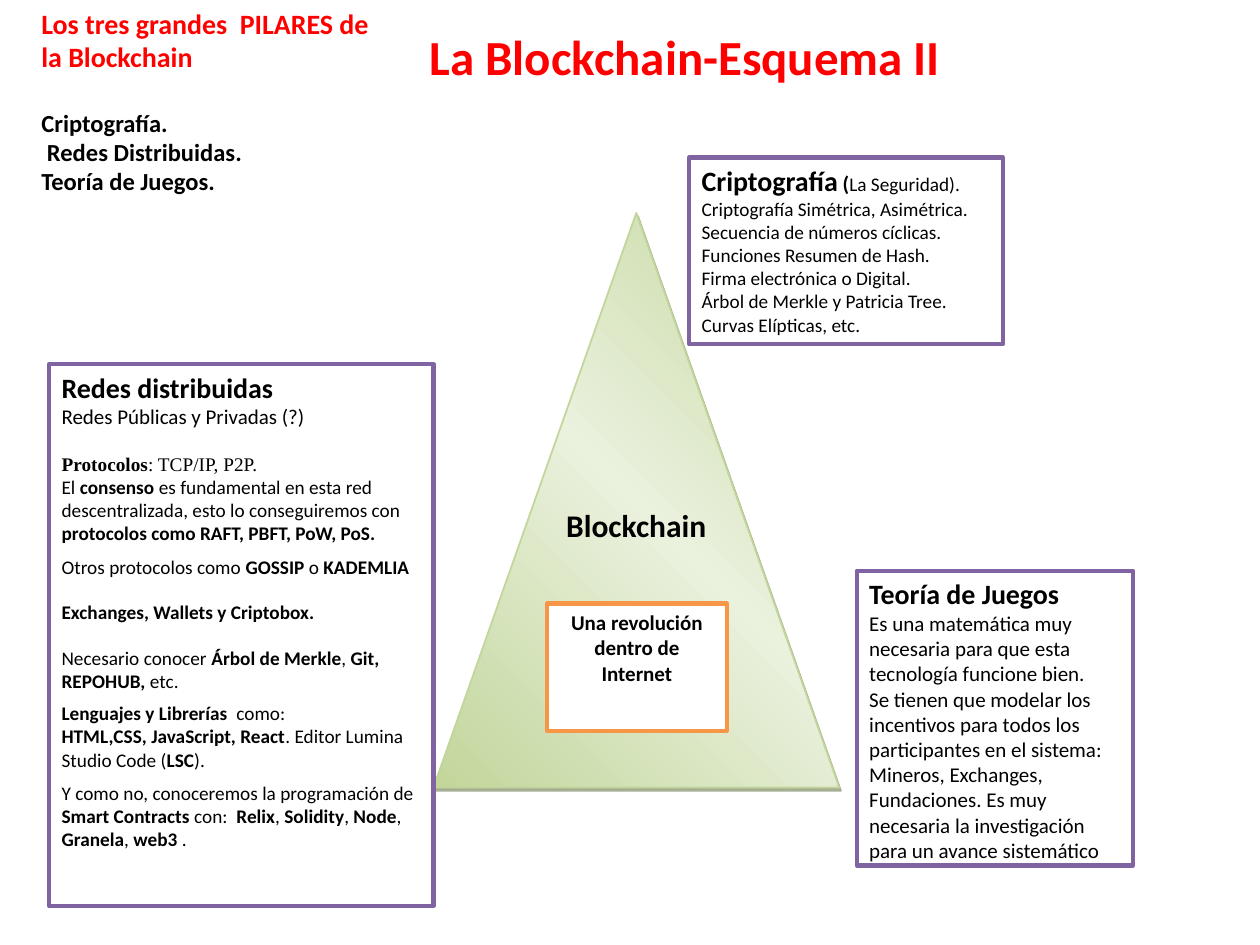
from copy import deepcopy
from pptx import Presentation
from pptx.dml.color import RGBColor
from pptx.enum.shapes import MSO_SHAPE as SHAPE
from pptx.enum.text import MSO_ANCHOR as ANCHOR, PP_ALIGN as ALIGN
from pptx.oxml import parse_xml
from pptx.oxml.ns import nsdecls, qn
from pptx.util import Inches, Pt

COLORS = {"red": "FF0000", "black": "000000", "white": "FFFFFF",
          "purple": "8064A2", "orange": "F79646",
          "green": "C2D69B", "pale": "EAF1DD", "shade": "4E6128"}
SANS, SERIF = "Calibri", "Times New Roman"

# Paragraph: (space after, [(text, size, font)]); *...* marks bold, \n a line break
TITLE = [(0, [("*La Blockchain-Esquema II*", 28, SANS)])]
PILLARS_HEAD = (19.5, [("*Los tres grandes  PILARES de la Blockchain*", 16, SANS)])
PILLARS = (0, [("*Criptografía.\n Redes Distribuidas.\nTeoría de Juegos.*", 14, SANS)])
CENTRE = [(10, [("*Blockchain*", 18, SANS)])]
CRYPTO = [(10, [
    ("*Criptografía*", 16, SANS), ("* (*", 12, SANS),
    ("La Seguridad).\nCriptografía Simétrica, Asimétrica.\n"
     "Secuencia de números cíclicas.\nFunciones Resumen de Hash.\n"
     "Firma electrónica o Digital.\nÁrbol de Merkle y Patricia Tree.\n"
     "Curvas Elípticas, etc.", 11, SANS)])]
NETWORKS = [
    (0, [("*Redes distribuidas*", 16, SANS)]),
    (13, [("Redes Públicas y Privadas (?)", 12, SANS)]),
    (6, [("*Protocolos*: TCP/IP, P2P.\n", 11, SERIF),
         ("El *consenso* es fundamental en esta red descentralizada, esto lo "
          "conseguiremos con *protocolos como RAFT, PBFT, PoW, PoS.*", 11, SANS)]),
    (13, [("Otros protocolos como *GOSSIP* o *KADEMLIA*", 11, SANS)]),
    (13, [("*Exchanges, Wallets y Criptobox.*", 11, SANS)]),
    (5, [("Necesario conocer *Árbol de Merkle*, *Git, REPOHUB, *etc.", 11, SANS)]),
    (6, [("*Lenguajes y Librerías  *como:\n*HTML,CSS, JavaScript, React*. "
          "Editor Lumina Studio Code (*LSC*).", 11, SANS)]),
    (6, [("Y como no, conoceremos la programación de *Smart Contracts *con:  "
          "*Relix*, *Solidity*, *Node*, *Granela*, *web3* .", 11, SANS)]),
]
GAMES = [(10, [
    ("*Teoría de Juegos*\n", 16, SANS),
    ("Es una matemática muy necesaria para que esta tecnología funcione bien.\n"
     "Se tienen que modelar los incentivos para todos los participantes en el "
     "sistema: Mineros, Exchanges, Fundaciones. Es muy necesaria la "
     "investigación para un avance sistemático", 12, SANS)])]
REVOLUTION = [(10, [("*Una revolución dentro de\nInternet*", 12, SANS)])]

# Boxes: place, border, alignment, text
BOXES = [
    ((5.47, 1.25, 2.49, 1.48), "purple", ALIGN.LEFT, CRYPTO),
    ((0.39, 2.89, 3.05, 4.3), "purple", ALIGN.LEFT, NETWORKS),
    ((6.8, 4.53, 2.19, 2.34), "purple", ALIGN.LEFT, GAMES),
    ((4.34, 4.79, 1.43, 1.01), "orange", ALIGN.CENTER, REVOLUTION),
]


def rgb(name):
    return RGBColor.from_string(COLORS[name])


def add_text(p, markup, size, font, color):
    for i, part in enumerate(markup.split("*")):
        for j, line in enumerate(part.split("\n")):
            if j:
                p.add_line_break()
            if line:
                r = p.add_run()
                r.text = line
                r.font.name, r.font.size, r.font.bold = font, Pt(size), i % 2 == 1
                r.font.color.rgb = rgb(color)


def write(sp, paragraphs, align=ALIGN.LEFT, colors=("black",), anchor=ANCHOR.TOP):
    tf = sp.text_frame
    tf.word_wrap, tf.vertical_anchor = True, anchor
    tf.margin_left = tf.margin_right = Inches(0.1)
    tf.margin_top = tf.margin_bottom = Inches(0.05)
    for i, (after, runs) in enumerate(paragraphs):
        p = tf.add_paragraph() if i else tf.paragraphs[0]
        p.alignment, p.line_spacing = align, 1.0
        p.space_before, p.space_after = Pt(0), Pt(after)
        for run in runs:
            add_text(p, *run, colors[min(i, len(colors) - 1)])


def add_outlined(s, kind, place, border, width):
    sp = s.shapes.add_shape(kind, *map(Inches, place))
    sp.shadow.inherit = False
    sp.line.color.rgb, sp.line.width = rgb(border), Pt(width)
    return sp


def main():
    prs = Presentation()
    prs.slide_width, prs.slide_height = Inches(10), Inches(7.5)
    s = prs.slides.add_slide(prs.slide_layouts[5])

    # Title
    title = s.shapes.title
    title.left, title.top, title.width, title.height = map(
        Inches, (3.05, 0.16, 4.77, 0.57))
    write(title, TITLE, ALIGN.CENTER, ("red",), ANCHOR.MIDDLE)

    # List of pillars
    pillars = s.shapes.add_textbox(*map(Inches, (0.23, 0, 2.89, 1.62)))
    write(pillars, [PILLARS_HEAD, PILLARS], colors=("red", "black"))

    # Triangle with a three-stop gradient and a hard shadow
    tri = add_outlined(s, SHAPE.ISOSCELES_TRIANGLE, (3.44, 1.69, 3.22, 4.56), "green", 1)
    tri.fill.gradient()
    tri.fill.gradient_angle = 45
    sp_pr = tri._element.spPr
    stops = sp_pr.find(".//" + qn("a:gsLst"))
    stops.append(deepcopy(stops[-1]))
    for stop, pos, name in zip(tri.fill.gradient_stops, (0, 0.5, 1),
                               ("green", "pale", "green")):
        stop.position, stop.color.rgb = pos, rgb(name)
    sp_pr.find(qn("a:effectLst")).append(parse_xml(
        f'<a:outerShdw {nsdecls("a")} blurRad="0" dist="{Pt(2.2)}" dir="{63 * 60000}">'
        f'<a:srgbClr val="{COLORS["shade"]}"><a:alpha val="50000"/></a:srgbClr>'
        '</a:outerShdw>'))
    write(tri, CENTRE, ALIGN.CENTER)

    # Text boxes around and inside the triangle
    for place, border, align, paragraphs in BOXES:
        box = add_outlined(s, SHAPE.RECTANGLE, place, border, 2.5)
        box.fill.solid()
        box.fill.fore_color.rgb = rgb("white")
        write(box, paragraphs, align)

    prs.save("out.pptx")


if __name__ == "__main__":
    main()
